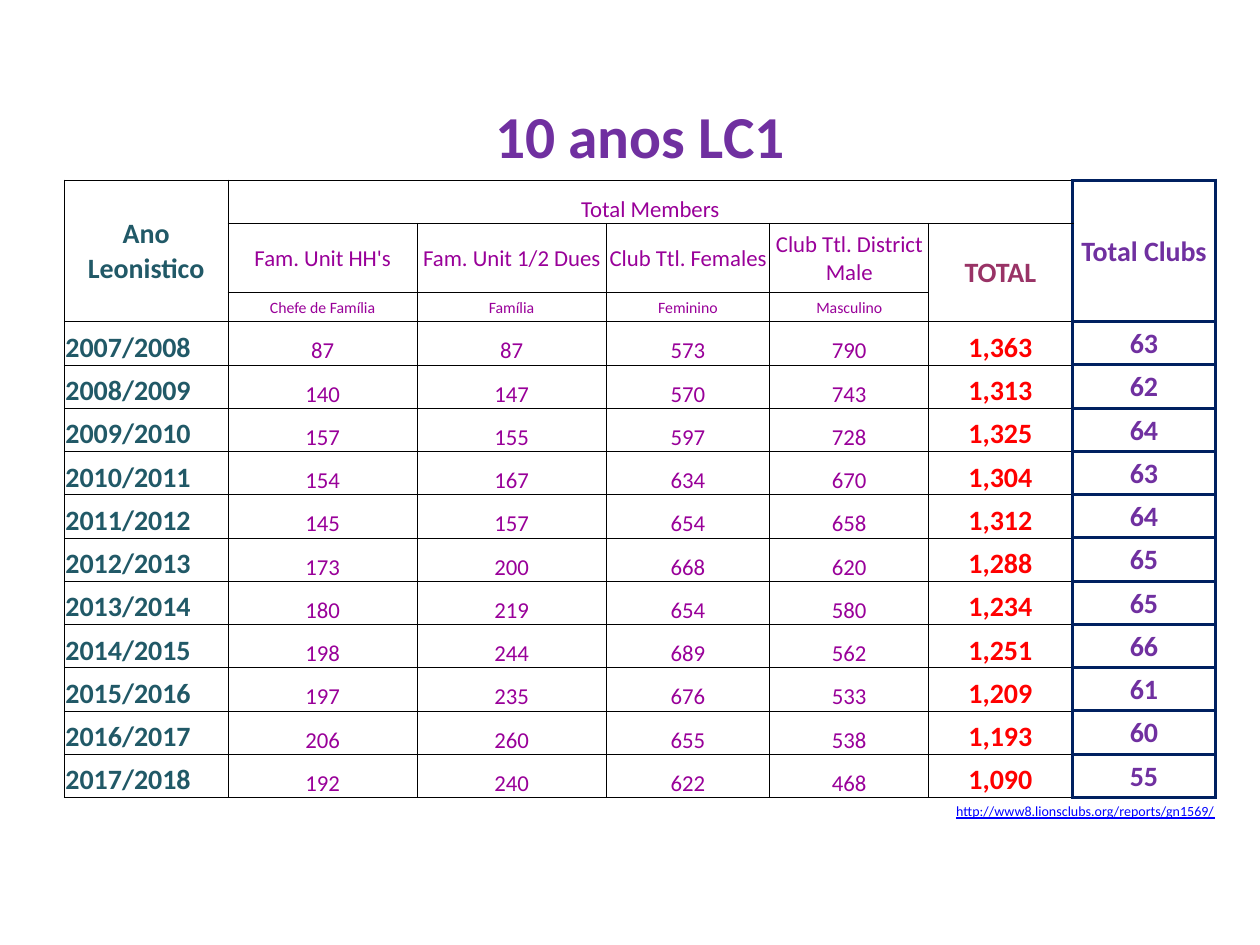
from dataclasses import dataclass, replace

from lxml import etree
from pptx import Presentation
from pptx.dml.color import RGBColor
from pptx.enum.text import MSO_ANCHOR, PP_ALIGN
from pptx.oxml.ns import qn
from pptx.table import Table, _Cell
from pptx.util import Inches, Pt

LEFT, CENTER, RIGHT = PP_ALIGN.LEFT, PP_ALIGN.CENTER, PP_ALIGN.RIGHT
MIDDLE, BOTTOM = MSO_ANCHOR.MIDDLE, MSO_ANCHOR.BOTTOM
FONT = "Calibri"
NO_TABLE_STYLE = "{2D5ABB26-0587-4C30-8999-92F81FD0307C}"
COLORS = {
    "purple": "7030A0", "magenta": "990099", "teal": "215967", "plum": "993366",
    "red": "FF0000", "link": "0000FF", "black": "000000", "navy": "002060",
}
THIN = ("black", 0.5)
THICK = ("navy", 2)
SIDES = ("L", "R", "T", "B")
GRID = dict.fromkeys(SIDES, THIN)
BESIDE_CLUBS = {**GRID, "R": THICK}
CLUBS_BOX = dict.fromkeys(SIDES, THICK)


@dataclass(frozen=True)
class CellStyle:
    size: float
    color: str
    borders: dict
    bold: bool = True
    underline: bool = False
    align: PP_ALIGN = CENTER
    anchor: MSO_ANCHOR = BOTTOM


TITLE = CellStyle(34, "purple", {"B": THIN}, anchor=MIDDLE)
YEAR = CellStyle(16, "teal", GRID, align=LEFT)
MEMBERS = CellStyle(13, "magenta", GRID, bold=False)
TOTAL = CellStyle(16, "red", BESIDE_CLUBS)
CLUBS = CellStyle(16, "purple", CLUBS_BOX, anchor=MIDDLE)
YEAR_HEADER = replace(YEAR, align=CENTER, anchor=MIDDLE)
GROUP_HEADER = replace(MEMBERS, borders=BESIDE_CLUBS)
MEMBERS_HEADER = replace(MEMBERS, anchor=MIDDLE)
MEMBERS_NOTE = replace(MEMBERS_HEADER, size=9)
TOTAL_HEADER = replace(TOTAL, color="plum", anchor=MIDDLE)
SOURCE = CellStyle(8, "link", {"T": THIN}, bold=False, underline=True, align=RIGHT)

COLUMN_WIDTHS = [1.3, 1.5, 1.5, 1.3, 1.26, 1.14, 1.14]
TABLE_HEIGHT = 5.75
TITLE_HEIGHT, HEADER_HEIGHT, NOTE_HEIGHT, SOURCE_HEIGHT = 0.67, 0.55, 0.23, 0.18
HEADERS = ["Fam. Unit HH's", "Fam. Unit 1/2 Dues", "Club Ttl. Females",
           "Club Ttl. District Male"]
NOTES = ["Chefe de Família", "Família", "Feminino", "Masculino"]
# Year, heads of family, family, female, male, total, clubs
RECORDS = [
    ("2007/2008", 87, 87, 573, 790, 1363, 63),
    ("2008/2009", 140, 147, 570, 743, 1313, 62),
    ("2009/2010", 157, 155, 597, 728, 1325, 64),
    ("2010/2011", 154, 167, 634, 670, 1304, 63),
    ("2011/2012", 145, 157, 654, 658, 1312, 64),
    ("2012/2013", 173, 200, 668, 620, 1288, 65),
    ("2013/2014", 180, 219, 654, 580, 1234, 65),
    ("2014/2015", 198, 244, 689, 562, 1251, 66),
    ("2015/2016", 197, 235, 676, 533, 1209, 61),
    ("2016/2017", 206, 260, 655, 538, 1193, 60),
    ("2017/2018", 192, 240, 622, 468, 1090, 55),
]
RECORD_STYLES = [YEAR] + [MEMBERS] * 4 + [TOTAL, CLUBS]
FIRST_RECORD = 4


def set_borders(cell: _Cell, borders: dict) -> None:
    properties = cell._tc.get_or_add_tcPr()
    for position, side in enumerate(SIDES):
        line = etree.Element(qn(f"a:ln{side}"))
        if side in borders:
            color, width = borders[side]
            line.set("w", str(Pt(width)))
            fill = etree.SubElement(line, qn("a:solidFill"))
            etree.SubElement(fill, qn("a:srgbClr"), val=COLORS[color])
        else:
            etree.SubElement(line, qn("a:noFill"))
        properties.insert(position, line)


def format_cell(cell: _Cell, style: CellStyle) -> None:
    cell.margin_left = cell.margin_right = cell.margin_top = Inches(0.01)
    cell.margin_bottom = 0
    cell.vertical_anchor = style.anchor
    cell.fill.background()
    paragraph = cell.text_frame.paragraphs[0]
    paragraph.alignment = style.align
    font = paragraph.font
    font.name = FONT
    font.size = Pt(style.size)
    font.bold = style.bold
    font.underline = style.underline
    font.color.rgb = RGBColor.from_string(COLORS[style.color])


def fill_cell(table: Table, row: int, column: int, text: str, style: CellStyle,
              rows: int = 1, columns: int = 1) -> None:
    last_row, last_column = row + rows - 1, column + columns - 1
    origin = table.cell(row, column)
    origin.text = text
    if rows * columns > 1:
        origin.merge(table.cell(last_row, last_column))
    for r in range(row, last_row + 1):
        for c in range(column, last_column + 1):
            on_edge = {"L": c == column, "R": c == last_column,
                       "T": r == row, "B": r == last_row}
            cell = table.cell(r, c)
            format_cell(cell, style)
            set_borders(cell, {side: border for side, border in style.borders.items()
                               if on_edge[side]})


def add_members_table(slide) -> Table:
    record_height = (TABLE_HEIGHT - TITLE_HEIGHT - HEADER_HEIGHT - NOTE_HEIGHT
                     - SOURCE_HEIGHT) / (len(RECORDS) + 1)
    heights = [TITLE_HEIGHT, record_height, HEADER_HEIGHT, NOTE_HEIGHT,
               *[record_height] * len(RECORDS), SOURCE_HEIGHT]
    table = slide.shapes.add_table(
        len(heights), len(COLUMN_WIDTHS), Inches(0.51), Inches(0.76),
        Inches(sum(COLUMN_WIDTHS)), Inches(TABLE_HEIGHT)).table
    table.first_row = table.horz_banding = False
    table._tbl.tblPr.find(qn("a:tableStyleId")).text = NO_TABLE_STYLE
    for column, width in zip(table.columns, COLUMN_WIDTHS):
        column.width = Inches(width)
    for row, height in zip(table.rows, heights):
        row.height = Inches(height)
    return table


def main() -> None:
    presentation = Presentation()
    presentation.slide_width = Inches(10)
    presentation.slide_height = Inches(7.5)
    slide = presentation.slides.add_slide(presentation.slide_layouts[6])
    table = add_members_table(slide)

    # Title and column headers
    fill_cell(table, 0, 0, "10 anos LC1", TITLE, columns=7)
    fill_cell(table, 1, 0, "Ano Leonistico", YEAR_HEADER, rows=3)
    fill_cell(table, 1, 1, "Total Members", GROUP_HEADER, columns=5)
    fill_cell(table, 1, 6, "Total Clubs", CLUBS, rows=3)
    for column, (header, note) in enumerate(zip(HEADERS, NOTES), start=1):
        fill_cell(table, 2, column, header, MEMBERS_HEADER)
        fill_cell(table, 3, column, note, MEMBERS_NOTE)
    fill_cell(table, 2, 5, "TOTAL", TOTAL_HEADER, rows=2)

    # One row for each year
    for row, record in enumerate(RECORDS, start=FIRST_RECORD):
        for column, (value, style) in enumerate(zip(record, RECORD_STYLES)):
            text = value if isinstance(value, str) else f"{value:,}"
            fill_cell(table, row, column, text, style)

    # Source line
    fill_cell(table, FIRST_RECORD + len(RECORDS), 0,
              "http://www8.lionsclubs.org/reports/gn1569/", SOURCE, columns=7)
    presentation.save("out.pptx")


if __name__ == "__main__":
    main()
